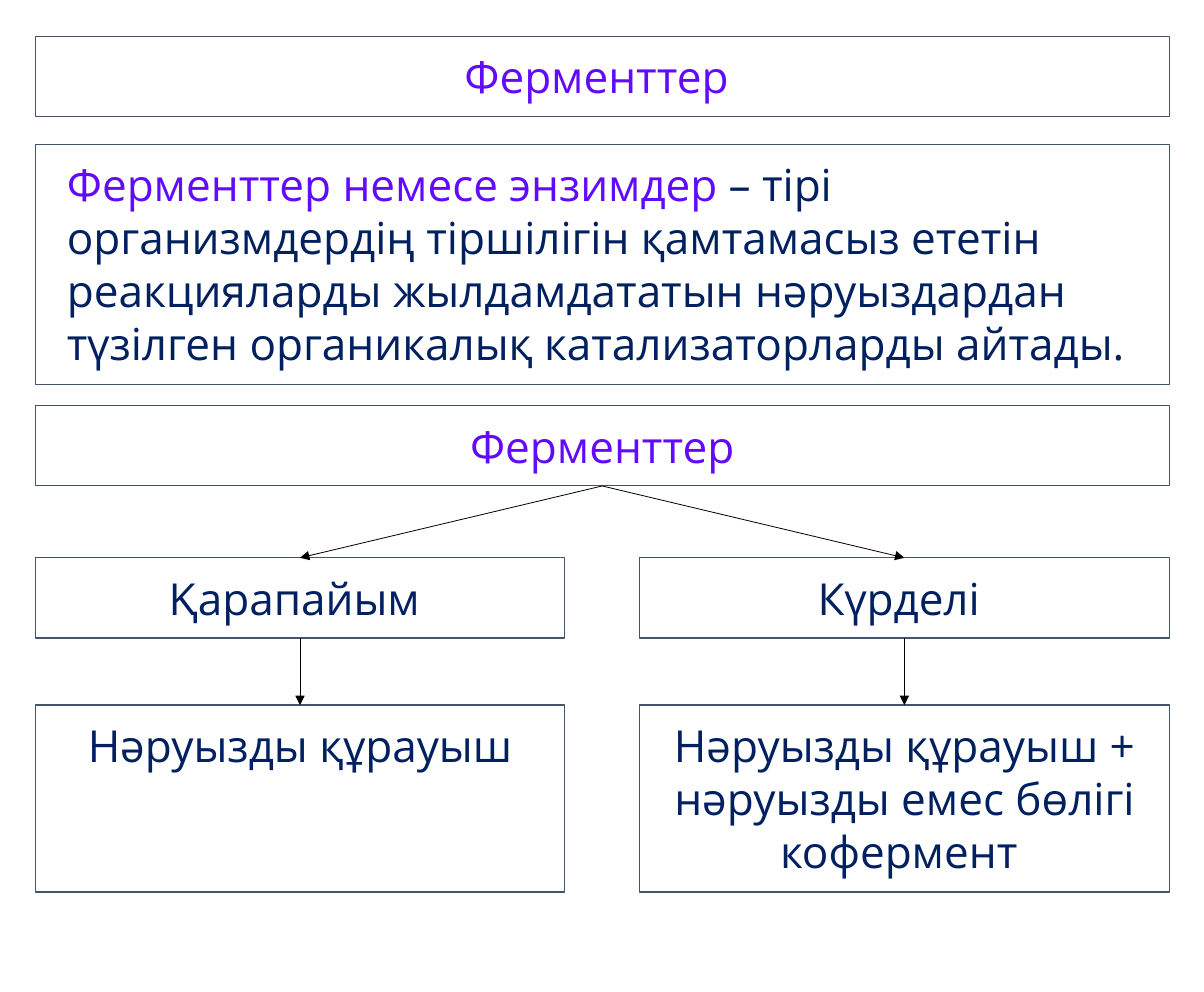
import pptx
import pptx.util
import pptx.dml.color
import pptx.enum.shapes
import pptx.enum.text
import pptx.oxml
import pptx.oxml.ns
from pptx.util import Cm

COLORS = {"accent": "620BFC", "text": "002060", "border": "44546A", "arrow": "000000"}
FONT = {"name": "Open Sans", "size": pptx.util.Pt(28)}

SLIDE_WIDTH, SLIDE_HEIGHT = 26.97, 22.23
MARGIN, FULL, HALF, ROW = 0.79, 25.4, 11.86, 1.8
RIGHT = MARGIN + FULL - HALF

ROWS = {
    "title": (0.81, ROW),
    "definition": (3.23, 5.38),
    "root": (9.09, ROW),
    "kind": (12.5, ROW),
    "content": (15.8, 4.19),
}
COLUMNS = {"full": (MARGIN, FULL), "left": (MARGIN, HALF), "right": (RIGHT, HALF)}

BOXES = [
    ("title", "full", "CENTER", [("Ферменттер ", "accent")]),
    ("definition", "full", "LEFT", [
        ("Ферменттер немесе энзимдер ", "accent"),
        ("– тірі организмдердің тіршілігін қамтамасыз ететін реакцияларды "
         "жылдамдататын нәруыздардан түзілген органикалық катализаторларды айтады.", "text"),
    ]),
    ("root", "full", "CENTER", [("Ферменттер", "accent")]),
    ("kind", "left", "CENTER", [("Қарапайым ", "text")]),
    ("kind", "right", "CENTER", [("Күрделі ", "text")]),
    ("content", "left", "CENTER", [("Нәруызды құрауыш", "text")]),
    ("content", "right", "CENTER", [
        ("Нәруызды құрауыш + нәруызды емес бөлігі кофермент ", "text"),
    ]),
]
ARROWS = [
    (("root", "full"), ("kind", "left")),
    (("root", "full"), ("kind", "right")),
    (("kind", "left"), ("content", "left")),
    (("kind", "right"), ("content", "right")),
]
FRAME = {
    "word_wrap": True,
    "auto_size": pptx.enum.text.MSO_AUTO_SIZE.NONE,
    "vertical_anchor": pptx.enum.text.MSO_ANCHOR.TOP,
    "margin_left": Cm(0.71),
    "margin_right": Cm(0.71),
    "margin_top": Cm(0.3),
    "margin_bottom": Cm(0.3),
}


def assign(target, values):
    for name, value in values.items():
        setattr(target, name, value)


def rgb(name):
    return pptx.dml.color.RGBColor.from_string(COLORS[name])


def set_line(line, color, width):
    line.color.rgb = rgb(color)
    line.width = pptx.util.Pt(width)


def add_box(page, row, column, align, spans):
    top, height = ROWS[row]
    left, width = COLUMNS[column]
    box = page.shapes.add_shape(
        pptx.enum.shapes.MSO_SHAPE.RECTANGLE, Cm(left), Cm(top), Cm(width), Cm(height))
    box.shadow.inherit = False
    box.fill.background()
    set_line(box.line, "border", 0.75)
    assign(box.text_frame, FRAME)
    para = box.text_frame.paragraphs[0]
    para.alignment = getattr(pptx.enum.text.PP_ALIGN, align)
    for text, color in spans:
        span = para.add_run()
        span.text = text
        assign(span.font, FONT)
        span.font.color.rgb = rgb(color)
    return box


def add_arrow(page, source, target):
    arrow = page.shapes.add_connector(pptx.enum.shapes.MSO_CONNECTOR.STRAIGHT, 0, 0, 0, 0)
    arrow.begin_connect(source, 2)
    arrow.end_connect(target, 0)
    set_line(arrow.line, "arrow", 0.5)
    head = pptx.oxml.parse_xml(
        f'<a:tailEnd {pptx.oxml.ns.nsdecls("a")} type="triangle"/>')
    arrow.line._get_or_add_ln().append(head)
    effects = pptx.oxml.parse_xml(f'<a:effectLst {pptx.oxml.ns.nsdecls("a")}/>')
    arrow._element.spPr.append(effects)


def main():
    deck = pptx.Presentation()
    deck.slide_width, deck.slide_height = Cm(SLIDE_WIDTH), Cm(SLIDE_HEIGHT)
    page = deck.slides.add_slide(deck.slide_layouts[6])
    boxes = {(row, column): add_box(page, row, column, align, spans)
             for row, column, align, spans in BOXES}
    for source, target in ARROWS:
        add_arrow(page, boxes[source], boxes[target])
    deck.save("out.pptx")


if __name__ == "__main__":
    main()
